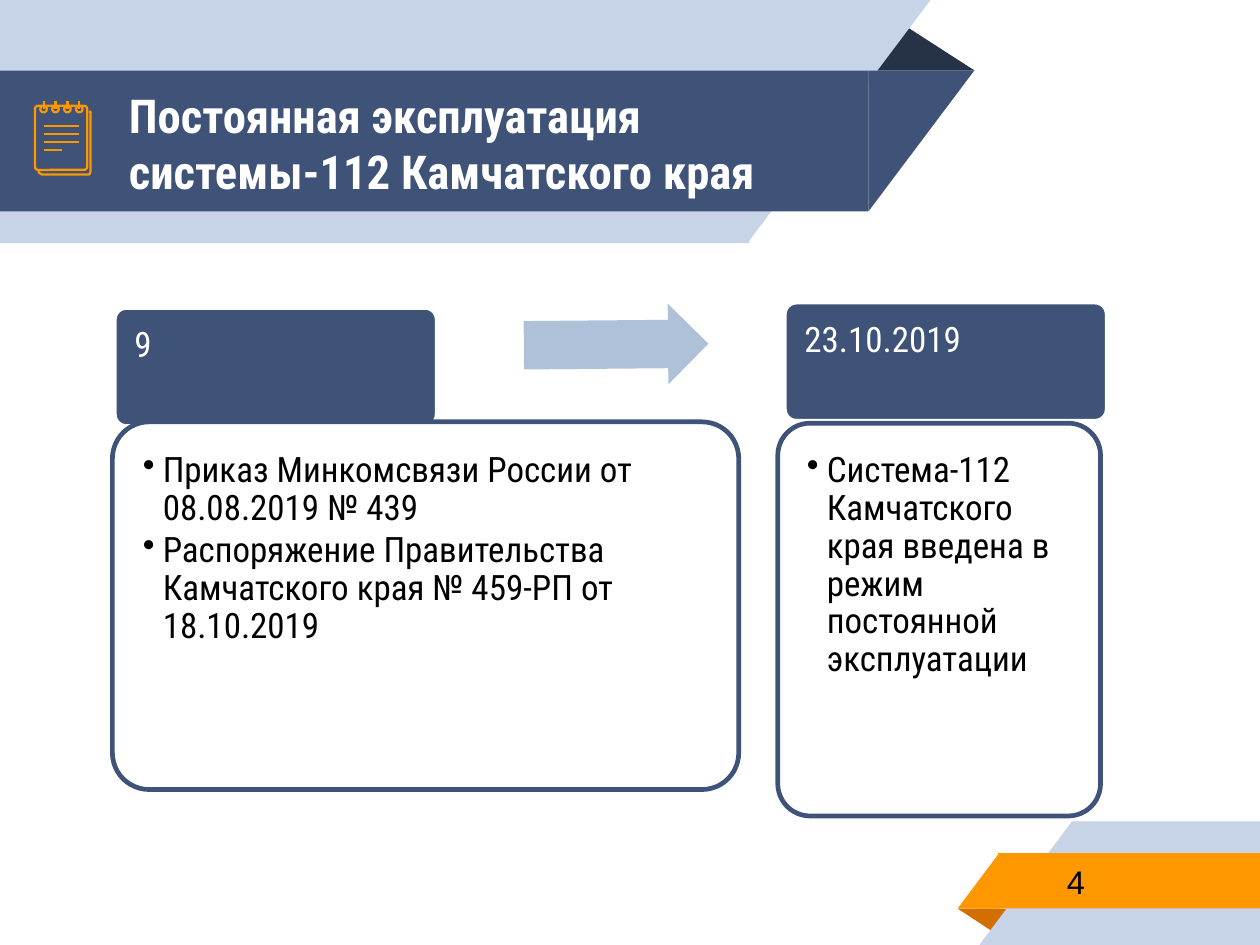
from lxml import etree
from pptx import Presentation
from pptx import util as u
from pptx.dml.color import RGBColor
from pptx.enum import shapes, text
from pptx.oxml.ns import qn

S = shapes.MSO_SHAPE

theme = {
    "navy": "3F5378", "ink": "263248", "pale": "C7D3E6", "arrow": "AFC1D9",
    "orange": "FF9800", "rust": "D26F00", "white": "FFFFFF", "black": "000000",
    "font": "Roboto Condensed", "plain": "Arial",
    "title": 20, "body": 15, "page": 14, "edge": 2, "thin": 0.96,
}

# Content; boxes are left, top, width, height in centimetres
title = "Постоянная эксплуатация системы-112 Камчатского края"
page = "4"
cards = [
    {"head": "9", "top": (1.73, 4.65, 4.88, 1.8), "box": (1.7, 6.38, 9.47, 5.56),
     "items": ["Приказ Минкомсвязи России от 08.08.2019 № 439",
               "Распоряжение Правительства Камчатского края № 459-РП от 18.10.2019"]},
    {"head": "23.10.2019", "top": (11.86, 4.57, 4.88, 1.8), "box": (11.76, 6.4, 4.88, 5.94),
     "items": ["Система-112 Камчатского края введена в режим постоянной эксплуатации"]},
]
# Folds: box, colour, rotation
folds = [((13.11, 0.36, 1.63, 0.71), "ink", 0), ((14.48, 13.74, 0.81, 0.36), "rust", 180)]
# Bands: bar box, slant left edge and width, colour, flip of the slant
bands = [
    ((0, 0, 11.33, 3.68), (11.3, 2.77), "pale", "flipV"),
    ((0, 1.07, 13.13, 2.13), (13.13, 1.6), "navy", "flipV"),
    ((16.2, 12.42, 2.85, 1.87), (14.81, 1.4), "pale", "flipH"),
    ((15.09, 12.9, 3.96, 0.84), (14.48, 0.63), "orange", "flipH"),
]
back = [(0.58, 2.59), (0.6, 2.62), (0.64, 2.64), (1.35, 2.64), (1.37, 2.6),
        (1.37, 1.7), (1.35, 1.68)]

prs = Presentation()
prs.slide_width, prs.slide_height = u.Cm(19.05), u.Cm(14.29)
slide = prs.slides.add_slide(prs.slide_layouts[6])


def rgb(name):
    return RGBColor.from_string(theme[name])


def paint(part, fill=None, line=None, width=0):
    part.shadow.inherit = False
    if fill:
        part.fill.solid()
        part.fill.fore_color.rgb = rgb(fill)
    else:
        part.fill.background()
    if line:
        part.line.color.rgb = rgb(line)
        part.line.width = u.Pt(width)
    else:
        part.line.fill.background()
    return part


def draw(kind, box, fill=None, line=None, width=0, into=slide):
    part = into.shapes.add_shape(kind, *map(u.Cm, box))
    return paint(part, fill, line, width)


def write(part, lines, size, color, pad, face="font", bold=False, mid=False):
    frame = part.text_frame
    frame.word_wrap = True
    frame.vertical_anchor = text.MSO_ANCHOR.MIDDLE if mid else text.MSO_ANCHOR.TOP
    frame.margin_left = frame.margin_right = u.Cm(pad)
    frame.margin_top = frame.margin_bottom = u.Cm(pad)
    frame.text = "\n".join(lines)
    for para in frame.paragraphs:
        para.alignment = text.PP_ALIGN.LEFT
        for run in para.runs:
            font = run.font
            font.name, font.size, font.bold = theme[face], u.Pt(theme[size]), bold
            font.color.rgb = rgb(color)
    return frame.paragraphs


def bullet(para):
    props = para._p.get_or_add_pPr()
    props.set("marL", str(u.Cm(0.3)))
    props.set("indent", str(-u.Cm(0.3)))
    etree.SubElement(props, qn("a:buChar")).set("char", "•")


def rule(group, x1, y1, x2, y2):
    line = group.shapes.add_connector(
        shapes.MSO_CONNECTOR.STRAIGHT, *map(u.Cm, (x1, y1, x2, y2)))
    line.line.color.rgb = rgb("orange")
    line.line.width = u.Pt(theme["thin"])
    etree.SubElement(line._element.spPr, qn("a:effectLst"))


# Ribbons
for fold, band_pair in zip(folds, (bands[:2], bands[2:])):
    box, color, turn = fold
    part = draw(S.ISOSCELES_TRIANGLE, box, color)
    part.adjustments[0] = 0.324
    part.rotation = turn
    for bar, (left, wide), color, flip in band_pair:
        draw(S.RECTANGLE, bar, color)
        slant = draw(S.RIGHT_TRIANGLE, (left, bar[1], wide, bar[3]), color)
        slant._element.spPr.find(qn("a:xfrm")).set(flip, "1")

# Title and page number
name = slide.shapes.add_textbox(*map(u.Cm, (1.7, 1.09, 10.95, 2.13)))
write(name, [title], "title", "white", 0.25, bold=True, mid=True)
num = slide.shapes.add_textbox(*map(u.Cm, (15.88, 12.88, 3.1, 0.89)))
write(num, [page], "page", "black", 0.25, face="plain", mid=True)

# Cards
for card in cards:
    head = draw(S.ROUNDED_RECTANGLE, card["top"], "navy", "white", theme["edge"])
    body = draw(S.ROUNDED_RECTANGLE, card["box"], "white", "navy", theme["edge"])
    head.adjustments[0] = body.adjustments[0] = 0.1
    tint = body._element.spPr.find(qn("a:solidFill"))[0]
    etree.SubElement(tint, qn("a:alpha")).set("val", "90000")
    write(head, [card["head"]], "body", "white", 0.25)[0].line_spacing = 0.9
    for para in write(body, card["items"], "body", "black", 0.3):
        para.line_spacing = 0.9
        para.space_after = u.Pt(2)
        bullet(para)

# Arrow between the cards
arrow = draw(S.RIGHT_ARROW, (7.92, 4.6, 2.79, 1.22), "arrow")
arrow.adjustments[0], arrow.adjustments[1] = 0.6, 0.5
arrow.rotation = 359.5

# Notepad icon
pad = slide.shapes.add_group_shape()
pts = [(u.Cm(x), u.Cm(y)) for x, y in back]
path = pad.shapes.build_freeform(*pts[0])
path.add_line_segments(pts[1:], close=False)
paint(path.convert_to_shape(), None, "orange", theme["thin"])
sheet = draw(S.ROUNDED_RECTANGLE, (0.53, 1.6, 0.79, 0.97), None, "orange", theme["thin"], pad)
sheet.adjustments[0] = 0.06
for i in range(4):
    x, y = 0.66 + 0.18 * i, 1.91 + 0.12 * i
    draw(S.OVAL, (x - 0.05, 1.6, 0.1, 0.1), None, "orange", theme["thin"], pad)
    rule(pad, x, 1.52, x, 1.65)
    rule(pad, 0.66, y, 0.94 if i == 3 else 1.19, y)

prs.save("out.pptx")
